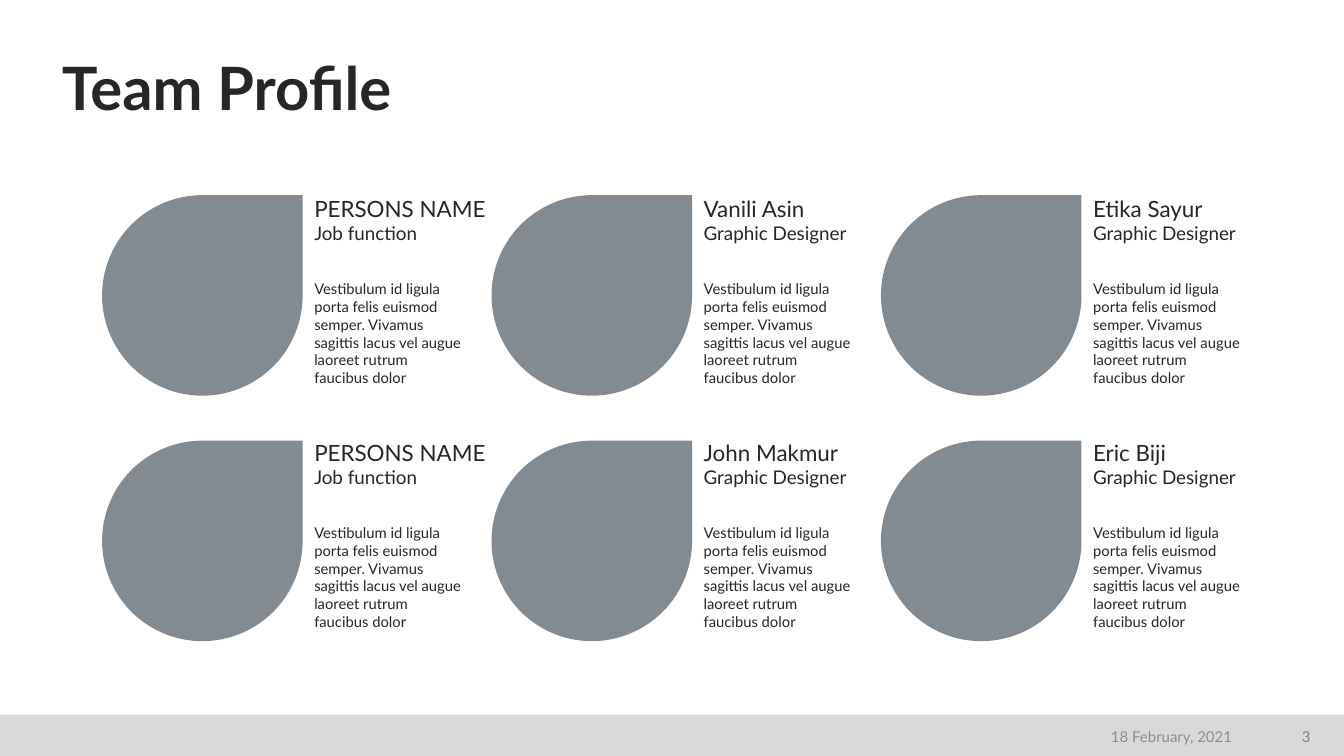
import dataclasses

import lxml.etree
import pptx
import pptx.dml.color
import pptx.enum.shapes
import pptx.enum.text
import pptx.oxml.ns
import pptx.util

Cm = pptx.util.Cm
ANCHOR = pptx.enum.text.MSO_ANCHOR
ALIGN = pptx.enum.text.PP_ALIGN
SHAPE = pptx.enum.shapes.MSO_SHAPE


@dataclasses.dataclass(frozen=True)
class Theme:
    font: str = "Lato"
    ink: str = "262626"
    portrait: str = "2F3F4A"
    footer: str = "D9D9D9"
    date: str = "8C8C8C"
    number: str = "808080"
    title_size: float = 32
    name_size: float = 12
    role_size: float = 10.1
    bio_size: float = 7.9
    footer_size: float = 8


class ProfileSlide:
    def __init__(self, slide, theme):
        self.slide = slide
        self.theme = theme

    def shape(self, preset, left, top, width, height, color, opacity=100):
        shape = self.slide.shapes.add_shape(
            preset, Cm(left), Cm(top), Cm(width), Cm(height))
        shape.shadow.inherit = False
        shape.line.fill.background()
        shape.fill.solid()
        shape.fill.fore_color.rgb = pptx.dml.color.RGBColor.from_string(color)
        if opacity < 100:
            rgb = shape.fill._xPr.find(".//" + pptx.oxml.ns.qn("a:srgbClr"))
            alpha = lxml.etree.SubElement(rgb, pptx.oxml.ns.qn("a:alpha"))
            alpha.set("val", str(opacity * 1000))

    def text(self, left, top, width, height, lines, color=None, bold=False,
             anchor=ANCHOR.TOP, align=ALIGN.LEFT, spacing=None):
        box = self.slide.shapes.add_textbox(
            Cm(left), Cm(top), Cm(width), Cm(height))
        frame = box.text_frame
        frame.word_wrap = True
        frame.vertical_anchor = anchor
        frame.margin_left = frame.margin_right = 0
        frame.margin_top = frame.margin_bottom = 0
        for index, (words, size) in enumerate(lines):
            paragraph = frame.add_paragraph() if index else frame.paragraphs[0]
            paragraph.alignment = align
            if spacing:
                paragraph.line_spacing = spacing
            run = paragraph.add_run()
            run.text = words
            run.font.name = self.theme.font
            run.font.size = pptx.util.Pt(size)
            run.font.bold = bold
            run.font.color.rgb = pptx.dml.color.RGBColor.from_string(
                color or self.theme.ink)

    def title(self, words):
        self.text(1.17, 1.02, 23.11, 1.32, [(words, self.theme.title_size)],
                  bold=True, anchor=ANCHOR.BOTTOM, spacing=0.9)

    def portrait(self, left, top):
        self.shape(SHAPE.TEAR, left, top, 3.79, 3.79,
                   self.theme.portrait, opacity=60)

    def profile(self, left, top, name, role, bio):
        self.text(left, top, 3.35, 1.45,
                  [(name, self.theme.name_size), (role, self.theme.role_size)])
        self.text(left, top + 1.67, 2.82, 1.88, [(bio, self.theme.bio_size)],
                  anchor=ANCHOR.MIDDLE)

    def footer(self, date, number):
        self.shape(SHAPE.RECTANGLE, 0, 13.51, 25.4, 0.78, self.theme.footer)
        for left, width, words, color in (
                (17.83, 5.46, date, self.theme.date),
                (24.08, 0.69, number, self.theme.number)):
            self.text(left, 13.59, width, 0.66,
                      [(words, self.theme.footer_size)], color,
                      anchor=ANCHOR.MIDDLE, align=ALIGN.RIGHT)


BIO = ("Vestibulum id ligula porta felis euismod semper. Vivamus sagittis "
       "lacus vel augue laoreet rutrum faucibus dolor")
TEAM = (
    (("PERSONS NAME", "Job function"),
     ("Vanili Asin", "Graphic Designer"),
     ("Etika Sayur", "Graphic Designer")),
    (("PERSONS NAME", "Job function"),
     ("John Makmur", "Graphic Designer"),
     ("Eric Biji", "Graphic Designer")),
)
COLUMN_STEP = 7.36
PORTRAIT_ROW_STEP = 4.64
PROFILE_ROW_STEP = 4.61


def main():
    deck = pptx.Presentation()
    deck.slide_width = Cm(25.4)
    deck.slide_height = Cm(14.29)
    page = ProfileSlide(deck.slides.add_slide(deck.slide_layouts[6]), Theme())

    page.footer("18 February, 2021", "3")
    for row, members in enumerate(TEAM):
        for column, (name, role) in enumerate(members):
            offset = column * COLUMN_STEP
            page.portrait(1.93 + offset, 3.69 + row * PORTRAIT_ROW_STEP)
            page.profile(5.94 + offset, 3.69 + row * PROFILE_ROW_STEP,
                         name, role, BIO)
    page.title("Team Profile")
    deck.save("out.pptx")


if __name__ == "__main__":
    main()
